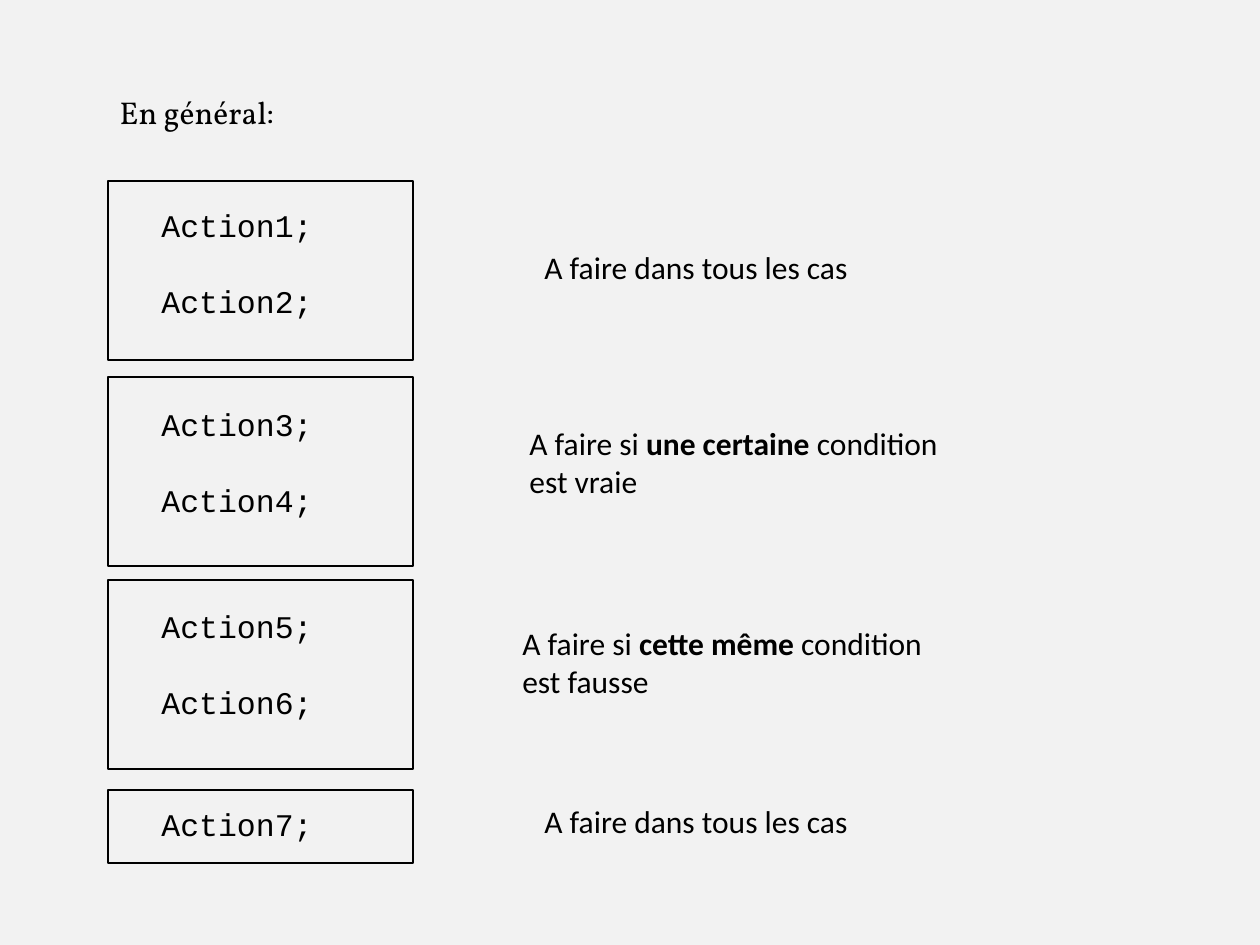
from pptx import Presentation
from pptx.dml.color import RGBColor
from pptx.enum.shapes import MSO_SHAPE as SHAPE
from pptx.enum.text import MSO_ANCHOR as ANCHOR, MSO_AUTO_SIZE as AUTO, PP_ALIGN as ALIGN
from pptx.util import Emu, Pt

BLACK = RGBColor(0x00, 0x00, 0x00)
PALE_GREY = RGBColor(0xF2, 0xF2, 0xF2)
ALWAYS = [["A faire dans tous les cas"]]
BLOCKS = [
    (181, 179, 200, ["Action1;", "Action2;"], (532, 242, 333), ALWAYS),
    (377, 189, 399, ["Action3;", "Action4;"], (517, 418, 485),
     [["A faire si ", "une certaine", " condition"], ["est vraie"]]),
    (580, 189, 601, ["Action5;", "Action6;"], (510, 618, 478),
     [["A faire si ", "cette même", " condition"], ["est fausse"]]),
    (790, 73, 799, ["Action7;"], (532, 796, 333), ALWAYS),
]


def px(n):
    """Convert pixels at 126 to the inch into EMU."""
    return Emu(round(n * 914400 / 126))


def style(p, font, align=ALIGN.LEFT):
    """Apply the common text format to a paragraph."""
    p.alignment = align
    p.font.size = Pt(18)
    p.font.name = font
    p.font.color.rgb = BLACK


def add_title(s, text):
    """Move, fill and format the title placeholder."""
    sp = s.shapes.title
    sp.left, sp.top, sp.width, sp.height = px(107), px(87), px(819), px(50)
    tf = sp.text_frame
    tf.text = text
    tf.vertical_anchor = ANCHOR.TOP
    tf.auto_size = AUTO.SHAPE_TO_FIT_TEXT
    style(tf.paragraphs[0], "Vollkorn")


def add_frame(s, top, height):
    """Draw the outline around a group of actions."""
    sp = s.shapes.add_shape(SHAPE.RECTANGLE, px(108), px(top), px(305), px(height))
    sp.shadow.inherit = False
    sp.fill.background()
    sp.line.color.rgb = BLACK
    sp.line.width = Pt(0.75)


def add_lines(s, left, top, width, height, lines, font, align=ALIGN.LEFT, gap=0):
    """Add a text box of lines, each a list of runs with every second run bold."""
    tf = s.shapes.add_textbox(px(left), px(top), px(width), px(height)).text_frame
    tf.word_wrap = False
    tf.auto_size = AUTO.SHAPE_TO_FIT_TEXT
    for i, runs in enumerate(lines):
        p = tf.add_paragraph() if i else tf.paragraphs[0]
        style(p, font, align)
        p.space_before = Pt(gap if i else 0)
        for j, text in enumerate(runs):
            r = p.add_run()
            r.text = text
            if j % 2:
                r.font.bold = True


def main():
    """Build the slide and save it."""
    prs = Presentation()
    prs.slide_width, prs.slide_height = px(1260), px(945)
    s = prs.slides.add_slide(prs.slide_layouts[5])
    s.background.fill.solid()
    s.background.fill.fore_color.rgb = PALE_GREY
    add_title(s, "En général:")
    for top, height, text_top, actions, note_at, note in BLOCKS:
        add_frame(s, top, height)
        add_lines(s, 149, text_top, 176, 126 if len(actions) > 1 else 50,
                  [[action] for action in actions], "Courier New", ALIGN.CENTER, 22)
        add_lines(s, *note_at, 50 if len(note) == 1 else 89, note, "Calibri")
    prs.save("out.pptx")


if __name__ == "__main__":
    main()
